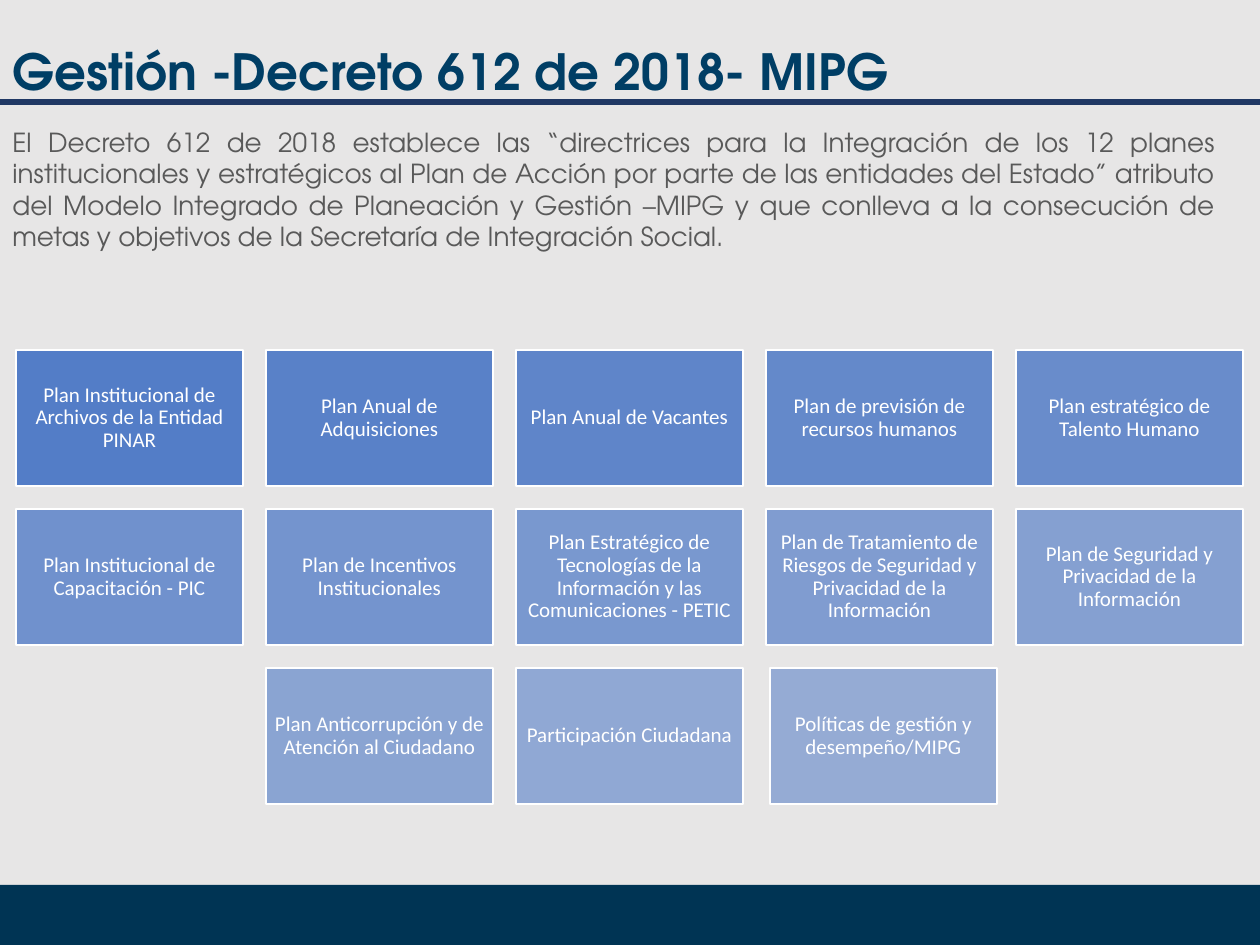
from dataclasses import dataclass

from pptx import Presentation
from pptx.dml.color import RGBColor
from pptx.enum.shapes import MSO_CONNECTOR, MSO_SHAPE
from pptx.enum.text import MSO_ANCHOR, MSO_AUTO_SIZE, PP_ALIGN
from pptx.oxml.ns import qn
from pptx.util import Emu, Pt
from lxml.etree import SubElement

TITLE = "Gestión -Decreto 612 de 2018- MIPG"
INTRO = (
    "El Decreto 612 de 2018 establece las “directrices para la Integración de los 12 planes "
    "institucionales y estratégicos al Plan de Acción por parte de las entidades del Estado” "
    "atributo del Modelo Integrado de Planeación y Gestión –MIPG y que conlleva a la consecución "
    "de metas y objetivos de la Secretaría de Integración Social."
)
PLAN_ROWS = [
    [
        "Plan Institucional de Archivos de la Entidad PINAR",
        "Plan Anual de Adquisiciones",
        "Plan Anual de Vacantes",
        "Plan de previsión de recursos humanos",
        "Plan estratégico de Talento Humano",
    ],
    [
        "Plan Institucional de Capacitación - PIC",
        "Plan de Incentivos Institucionales",
        "Plan Estratégico de Tecnologías de la Información y las Comunicaciones - PETIC",
        "Plan de Tratamiento de Riesgos de Seguridad y Privacidad de la Información",
        "Plan de Seguridad y Privacidad de la Información",
    ],
    [
        "Plan Anticorrupción y de Atención al Ciudadano",
        "Participación Ciudadana",
        "Políticas de gestión y desempeño/MIPG",
    ],
]


@dataclass(frozen=True)
class Theme:
    background: str = "E7E6E6"
    band: str = "003454"
    rule: str = "203864"
    title: str = "003E65"
    intro: str = "595959"
    card: str = "4472C4"
    white: str = "FFFFFF"
    heading_font: str = "TeX Gyre Adventor"
    card_font: str = "Calibri"
    title_size: float = 28.5
    intro_size: float = 15
    card_size: float = 12


THEME = Theme()
SLIDE_WIDTH, SLIDE_HEIGHT = 1260, 945
BAND_TOP, RULE_Y = 885, 102
COLUMNS = 5
CARD_WIDTH, CARD_HEIGHT = 227, 136
CARD_LEFT, CARD_TOP = 16, 350
COLUMN_STEP, ROW_STEP = 250, 159
CARD_INSET = 6
LAST_CARD_SHIFT = 4
FIRST_OPACITY, LAST_OPACITY = 90, 50


def px(value):
    return Emu(round(value * 914400 / 126))


def color(value):
    return RGBColor.from_string(value)


def place(shape, left, top, width, height):
    shape.left, shape.top, shape.width, shape.height = map(px, (left, top, width, height))


def write(shape, text, font_name, size, text_color, align, bold=False):
    frame = shape.text_frame
    frame.word_wrap = True
    frame.text = text
    paragraph = frame.paragraphs[0]
    paragraph.alignment = align
    paragraph.font.name = font_name
    paragraph.font.size = Pt(size)
    paragraph.font.color.rgb = color(text_color)
    paragraph.font.bold = bold
    return frame, paragraph


def add_rectangle(slide, left, top, width, height, fill):
    shape = slide.shapes.add_shape(MSO_SHAPE.RECTANGLE, *map(px, (left, top, width, height)))
    shape.shadow.inherit = False
    shape.fill.solid()
    shape.fill.fore_color.rgb = color(fill)
    shape.line.fill.background()
    return shape


def add_rule(slide):
    rule = slide.shapes.add_connector(
        MSO_CONNECTOR.STRAIGHT, px(0), px(RULE_Y), px(SLIDE_WIDTH), px(RULE_Y)
    )
    rule.line.color.rgb = color(THEME.rule)
    rule.line.width = Pt(3)
    SubElement(rule.element.spPr, qn("a:effectLst"))


def add_title(slide):
    title = slide.shapes.title
    place(title, 0, 42, 1063, 64)
    frame, paragraph = write(
        title, TITLE, THEME.heading_font, THEME.title_size, THEME.title, PP_ALIGN.LEFT, bold=True
    )
    frame.auto_size = MSO_AUTO_SIZE.NONE
    frame.vertical_anchor = MSO_ANCHOR.MIDDLE
    paragraph.line_spacing = 0.9


def add_intro(slide):
    intro = slide.shapes.add_textbox(px(0), px(120), px(1228), px(140))
    write(intro, INTRO, THEME.heading_font, THEME.intro_size, THEME.intro, PP_ALIGN.JUSTIFY)


def add_card(slide, text, left, top, opacity):
    card = add_rectangle(slide, left, top, CARD_WIDTH, CARD_HEIGHT, THEME.card)
    fill_color = card.element.spPr.find(qn("a:solidFill")).find(qn("a:srgbClr"))
    SubElement(fill_color, qn("a:alpha"), val=str(round(opacity * 1000)))
    card.line.color.rgb = color(THEME.white)
    card.line.width = Pt(1)
    frame, paragraph = write(
        card, text, THEME.card_font, THEME.card_size, THEME.white, PP_ALIGN.CENTER
    )
    frame.vertical_anchor = MSO_ANCHOR.MIDDLE
    frame.margin_left = frame.margin_right = px(CARD_INSET)
    frame.margin_top = frame.margin_bottom = px(CARD_INSET)
    paragraph.line_spacing = 0.9


def add_cards(slide):
    last = sum(len(plans) for plans in PLAN_ROWS) - 1
    index = 0
    for row, plans in enumerate(PLAN_ROWS):
        first_column = (COLUMNS - len(plans)) // 2
        for column, plan in enumerate(plans, first_column):
            left = CARD_LEFT + column * COLUMN_STEP
            if index == last:
                left += LAST_CARD_SHIFT
            opacity = FIRST_OPACITY + (LAST_OPACITY - FIRST_OPACITY) * index / last
            add_card(slide, plan, left, CARD_TOP + row * ROW_STEP, opacity)
            index += 1


def main():
    presentation = Presentation()
    presentation.slide_width = px(SLIDE_WIDTH)
    presentation.slide_height = px(SLIDE_HEIGHT)
    slide = presentation.slides.add_slide(presentation.slide_layouts.get_by_name("Title Only"))
    slide.background.fill.solid()
    slide.background.fill.fore_color.rgb = color(THEME.background)
    add_rectangle(slide, 0, BAND_TOP, SLIDE_WIDTH, SLIDE_HEIGHT - BAND_TOP, THEME.band)
    add_rule(slide)
    add_title(slide)
    add_intro(slide)
    add_cards(slide)
    presentation.save("out.pptx")


if __name__ == "__main__":
    main()
